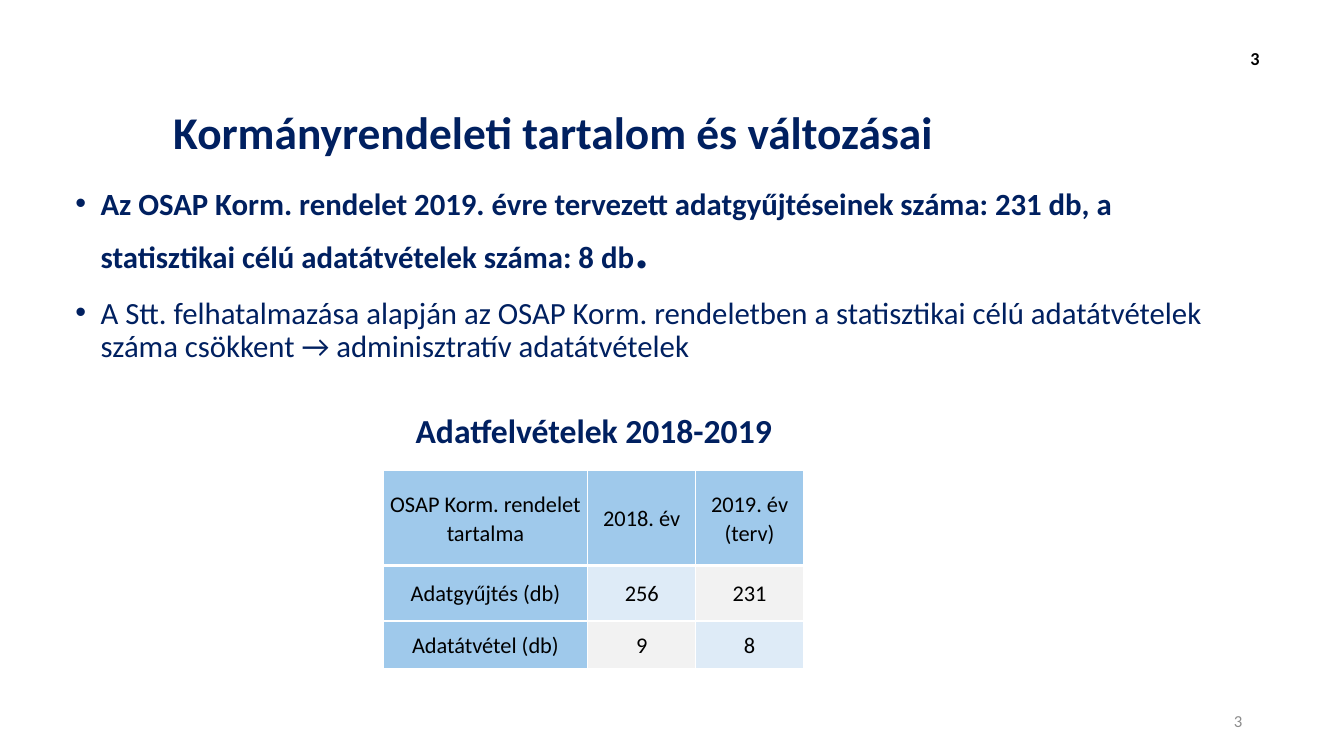
from lxml.etree import SubElement
from pptx import Presentation
from pptx.dml.color import RGBColor
from pptx.enum.text import MSO_ANCHOR as Anchor, MSO_AUTO_SIZE as AutoSize, PP_ALIGN as Align
from pptx.oxml.ns import qn
from pptx.util import Inches, Pt

NAVY = RGBColor(0x00, 0x20, 0x60)
BLACK = RGBColor(0, 0, 0)
GREY = RGBColor(0x8C, 0x8C, 0x8C)
HEADER_BLUE = RGBColor(0x9F, 0xC9, 0xEB)
PALE_BLUE = RGBColor(0xDE, 0xEB, 0xF7)
PALE_GREY = RGBColor(0xF2, 0xF2, 0xF2)
BORDER = RGBColor(0xFF, 0xFF, 0xFF)


class SlideBuilder:
    """Draw styled text boxes, bullets and tables on one slide."""

    def __init__(self, slide, font_name="Calibri"):
        self.slide = slide
        self.font_name = font_name

    def style(self, target, size, color, bold=False):
        font = target.font
        font.name, font.size, font.bold = self.font_name, Pt(size), bold
        font.color.rgb = color

    def frame(self, box, anchor=Anchor.MIDDLE):
        shape = self.slide.shapes.add_textbox(*map(Inches, box))
        frame = shape.text_frame
        frame.word_wrap = True
        frame.vertical_anchor = anchor
        return frame

    def text(self, box, text, size, color, bold=False, align=Align.LEFT, spacing=1.0,
             anchor=Anchor.MIDDLE):
        frame = self.frame(box, anchor)
        paragraph = frame.paragraphs[0]
        paragraph.text = text
        paragraph.alignment = align
        paragraph.line_spacing = spacing
        self.style(paragraph, size, color, bold)
        return frame

    def bullets(self, box, items, color):
        frame = self.frame(box, Anchor.TOP)
        for index, runs in enumerate(items):
            paragraph = frame.add_paragraph() if index else frame.paragraphs[0]
            paragraph.line_spacing = 0.9
            if index:
                paragraph.space_before = Pt(12)
            properties = paragraph._p.get_or_add_pPr()
            properties.set("marL", str(Inches(0.25)))
            properties.set("indent", str(-Inches(0.25)))
            SubElement(properties, qn("a:buFont"), typeface="Arial")
            SubElement(properties, qn("a:buChar"), char="•")
            for text, size, bold in runs:
                run = paragraph.add_run()
                run.text = text
                self.style(run, size, color, bold)

    def border(self, cell, bottom_width):
        properties = cell._tc.get_or_add_tcPr()
        for index, (side, width) in enumerate(
                (("lnL", 1), ("lnR", 1), ("lnT", 1), ("lnB", bottom_width))):
            line = SubElement(properties, qn(f"a:{side}"), w=str(Pt(width)))
            fill = SubElement(line, qn("a:solidFill"))
            SubElement(fill, qn("a:srgbClr"), val=str(BORDER))
            properties.insert(index, line)

    def table(self, box, widths, heights, rows):
        table = self.slide.shapes.add_table(
            len(rows), len(widths), *map(Inches, box)).table
        for column, width in zip(table.columns, widths):
            column.width = Inches(width)
        for row, height in zip(table.rows, heights):
            row.height = Inches(height)
        for row_index, row in enumerate(rows):
            for column_index, text in enumerate(row):
                cell = table.cell(row_index, column_index)
                cell.text = text
                cell.vertical_anchor = Anchor.MIDDLE
                cell.margin_left = cell.margin_right = Inches(0.05)
                cell.margin_top = cell.margin_bottom = 0
                paragraph = cell.text_frame.paragraphs[0]
                paragraph.alignment = Align.CENTER
                paragraph.line_spacing = 1.07
                self.style(paragraph, 16, BLACK)
                cell.fill.solid()
                if row_index == 0 or column_index == 0:
                    color = HEADER_BLUE
                else:
                    color = (PALE_BLUE, PALE_GREY)[(row_index + column_index) % 2]
                cell.fill.fore_color.rgb = color
                self.border(cell, 3 if row_index == 0 else 1)


def main():
    presentation = Presentation()
    presentation.slide_width = Inches(13.33)
    presentation.slide_height = Inches(7.5)
    slide = presentation.slides.add_slide(presentation.slide_layouts[6])
    builder = SlideBuilder(slide)

    builder.text((9.42, 6.95, 3, 0.4), "3", 12, GREY, align=Align.RIGHT)
    builder.text((12.2, 0.38, 0.39, 0.4), "3", 13, BLACK, True, Align.RIGHT)
    builder.text((1.62, 0.91, 8.54, 0.85), "Kormányrendeleti tartalom és változásai",
                 32.4, NAVY, True, spacing=0.9)
    builder.bullets((0.65, 1.82, 11.77, 2.05), [
        [("Az OSAP Korm. rendelet 2019. évre tervezett adatgyűjtéseinek száma: 231 db, "
          "a statisztikai célú adatátvételek száma: 8 db", 22, True), (".", 39, True)],
        [("A Stt. felhatalmazása alapján az OSAP Korm. rendeletben a statisztikai célú "
          "adatátvételek száma csökkent → adminisztratív adatátvételek", 22, False)],
    ], NAVY)
    caption = builder.text((3.93, 4.02, 3.92, 0.5), "Adatfelvételek 2018-2019",
                           24, NAVY, True, Align.CENTER, anchor=Anchor.TOP)
    caption.auto_size = AutoSize.SHAPE_TO_FIT_TEXT
    builder.table((3.8, 4.67, 4.17, 1.96), (2.03, 1.07, 1.07), (0.94, 0.55, 0.47), [
        ("OSAP Korm. rendelet tartalma", "2018. év", "2019. év (terv)"),
        ("Adatgyűjtés (db)", "256", "231"),
        ("Adatátvétel (db)", "9", "8"),
    ])
    presentation.save("out.pptx")


if __name__ == "__main__":
    main()
